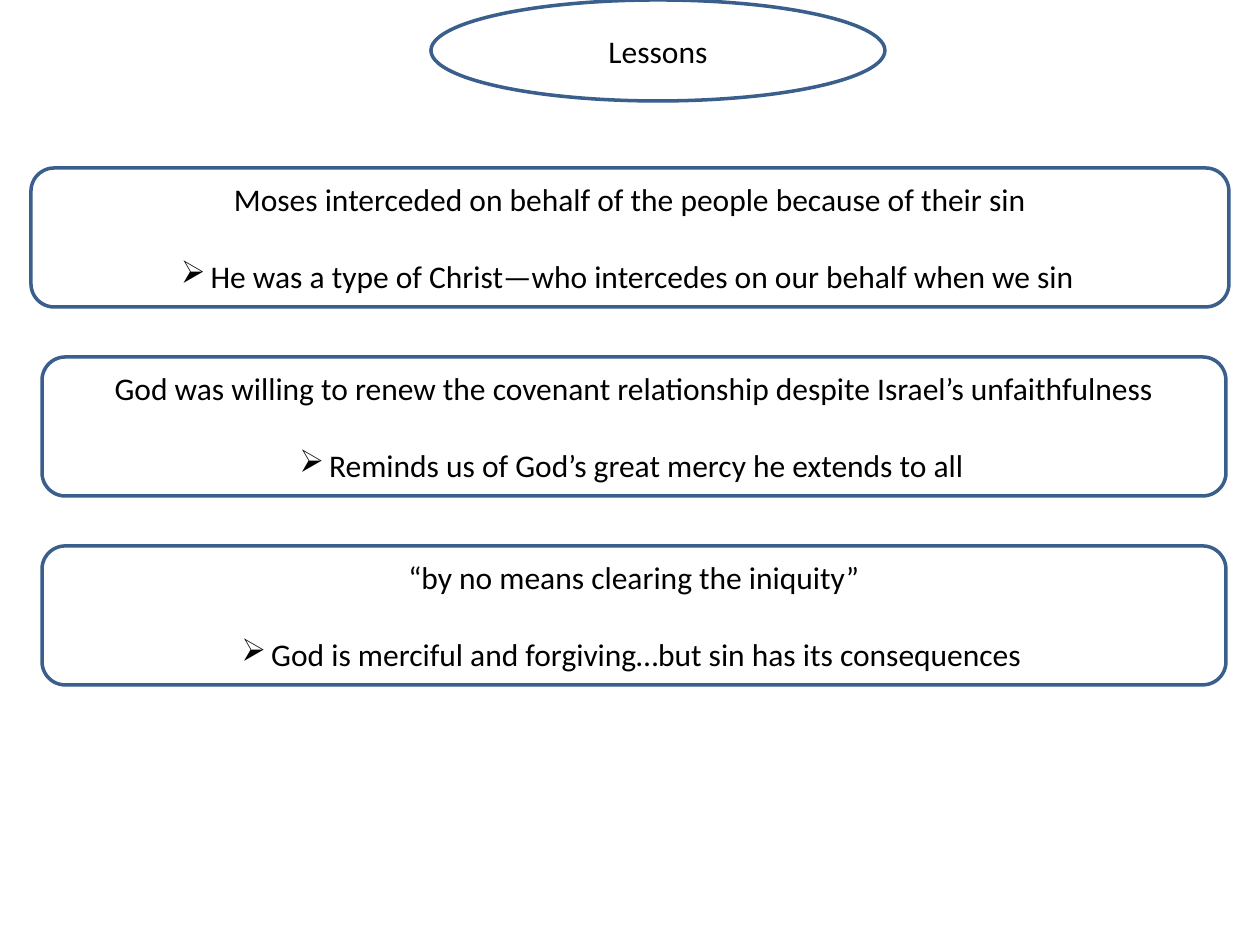
from lxml.etree import SubElement
from pptx import Presentation
from pptx.dml.color import RGBColor
from pptx.enum.shapes import MSO_SHAPE as Shape
from pptx.enum.text import MSO_ANCHOR as Anchor, PP_ALIGN as Align
from pptx.oxml.ns import qn
from pptx.util import Emu, Pt

PX = 914400 // 126
COLORS = {"fill": "FFFFFF", "border": "3A5F8C", "text": "000000"}
TITLE_BOX = (431, 0, 454, 101)
LESSON_HEIGHT = 139
LESSON_TOP = 168
LESSON_STEP = 189
LESSONS = [
    (31, 1198, "Moses interceded on behalf of the people because of their sin",
     "He was a type of Christ—who intercedes on our behalf when we sin"),
    (42, 1184, "God was willing to renew the covenant relationship despite Israel’s unfaithfulness",
     "Reminds us of God’s great mercy he extends to all"),
    (42, 1184, "“by no means clearing the iniquity”",
     "God is merciful and forgiving…but sin has its consequences"),
]


def color(key):
    """Return the named colour."""
    return RGBColor.from_string(COLORS[key])


def add_outlined(slide, preset, box):
    """Add a white shape with a blue border and return its text frame."""
    outlined = slide.shapes.add_shape(preset, *(Emu(length * PX) for length in box))
    outlined.shadow.inherit = False
    outlined.fill.solid()
    outlined.fill.fore_color.rgb = color("fill")
    outlined.line.color.rgb = color("border")
    outlined.line.width = Pt(2)
    body = outlined.text_frame
    body.word_wrap = True
    body.vertical_anchor = Anchor.MIDDLE
    return body


def write_line(paragraph, wording):
    """Write one centred line of text."""
    paragraph.text = wording
    paragraph.alignment = Align.CENTER
    paragraph.font.name = "Calibri"
    paragraph.font.size = Pt(18)
    paragraph.font.color.rgb = color("text")


def add_title(slide, box, wording):
    """Add the title ellipse."""
    write_line(add_outlined(slide, Shape.OVAL, box).paragraphs[0], wording)


def add_lesson(slide, box, statement, application):
    """Add a lesson with its bulleted application one line below."""
    body = add_outlined(slide, Shape.ROUNDED_RECTANGLE, box)
    write_line(body.paragraphs[0], statement)
    bulleted = body.add_paragraph()
    write_line(bulleted, application)
    bulleted.space_before = Pt(22)
    properties = bulleted.font._element.getparent()
    bullet = SubElement(properties, qn("a:buChar"), char="➢")
    bulleted.font._element.addprevious(bullet)


def main():
    """Build and save the lessons slide."""
    deck = Presentation()
    deck.slide_width = Emu(1260 * PX)
    deck.slide_height = Emu(945 * PX)
    slide = deck.slides.add_slide(deck.slide_layouts[6])
    add_title(slide, TITLE_BOX, "Lessons")
    for index, (left, width, statement, application) in enumerate(LESSONS):
        box = (left, LESSON_TOP + index * LESSON_STEP, width, LESSON_HEIGHT)
        add_lesson(slide, box, statement, application)
    deck.save("out.pptx")


if __name__ == "__main__":
    main()
